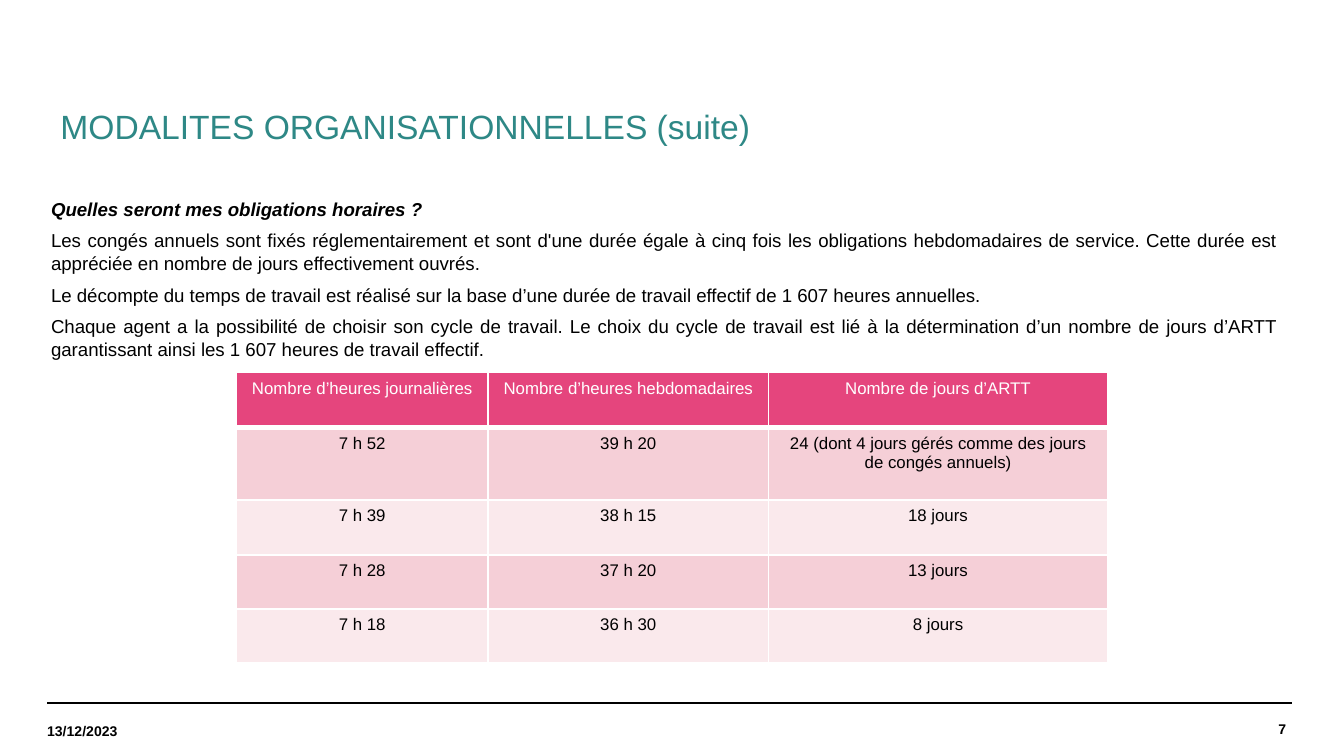
"""Build the slide on working hours and the matching days of leave."""
from lxml.etree import SubElement
from pptx import Presentation
from pptx.dml.color import RGBColor
from pptx.enum.shapes import MSO_CONNECTOR
from pptx.enum.text import MSO_ANCHOR, PP_ALIGN
from pptx.oxml.ns import qn
from pptx.util import Inches, Pt

TITLE = "MODALITES ORGANISATIONNELLES (suite)"
BODY = [
    "Quelles seront mes obligations horaires ?",
    "Les congés annuels sont fixés réglementairement et sont d'une durée égale à cinq fois les "
    "obligations hebdomadaires de service. Cette durée est appréciée en nombre de jours "
    "effectivement ouvrés.",
    "Le décompte du temps de travail est réalisé sur la base d’une durée de travail effectif "
    "de 1 607 heures annuelles.",
    "Chaque agent a la possibilité de choisir son cycle de travail. Le choix du cycle de travail "
    "est lié à la détermination d’un nombre de jours d’ARTT garantissant ainsi les 1 607 heures "
    "de travail effectif.",
]
CYCLES = [
    ("Nombre d’heures journalières", "Nombre d’heures hebdomadaires", "Nombre de jours d’ARTT"),
    ("7 h 52", "39 h 20", "24 (dont 4 jours gérés comme des jours de congés annuels)"),
    ("7 h 39", "38 h 15", "18 jours"),
    ("7 h 28", "37 h 20", "13 jours"),
    ("7 h 18", "36 h 30", "8 jours"),
]
WIDTHS = (1.87, 2.09, 2.52)
HEIGHTS = (0.41, 0.54, 0.41, 0.4, 0.4)
RULES = (0.35, 0.39)
FOOTER = [
    ("13/12/2023", (0.35, 5.25, 1.28, 0.38), PP_ALIGN.LEFT),
    ("7", (8.09, 5.23, 1.48, 0.39), PP_ALIGN.RIGHT),
]
THEME = {
    "font": "Arial", "title": 18, "body": 10, "cell": 9, "foot": 7.5,
    "teal": "2E8886", "ink": "000000", "white": "FFFFFF",
    "head": "E5457D", "bands": ("F5CFD7", "FAE9EC"),
}


def color(name):
    return RGBColor.from_string(THEME.get(name, name))


def style(para, size, ink="ink", bold=False, italic=False, align=PP_ALIGN.LEFT):
    para.alignment = align
    for run in para.runs:
        font = run.font
        font.name, font.size = THEME["font"], Pt(THEME[size])
        font.bold, font.italic = bold, italic
        font.color.rgb = color(ink)


def place(shape, box):
    shape.left, shape.top, shape.width, shape.height = map(Inches, box)


def clear(frame, anchor):
    frame.word_wrap = True
    frame.vertical_anchor = anchor
    frame.margin_left = frame.margin_right = frame.margin_top = frame.margin_bottom = 0


def add_title(slide):
    shape = slide.shapes.title
    place(shape, (0.35, 0.74, 9.29, 0.4))
    frame = shape.text_frame
    frame.text = TITLE
    frame.vertical_anchor = MSO_ANCHOR.TOP
    style(frame.paragraphs[0], "title", "teal")


def add_body(slide):
    shape = slide.placeholders[1]
    place(shape, (0.28, 1.24, 9.21, 3.7))
    frame = shape.text_frame
    clear(frame, MSO_ANCHOR.TOP)
    frame.margin_top = Inches(0.23)
    frame.text = "\n".join(BODY)
    for i, para in enumerate(frame.paragraphs):
        props = para._p.get_or_add_pPr()
        props.set("marL", str(Inches(0.1)))
        props.set("indent", "0")
        SubElement(props, qn("a:buNone"))
        para.space_before, para.space_after = Pt(0), Pt(5)
        style(para, "body", bold=i == 0, italic=i == 0, align=PP_ALIGN.JUSTIFY)


def add_edges(cell, bottom):
    props = cell._tc.get_or_add_tcPr()
    for side, width in (("L", 1), ("R", 1), ("T", 1), ("B", bottom)):
        edge = SubElement(props, qn(f"a:ln{side}"), w=str(Pt(width)))
        fill = SubElement(edge, qn("a:solidFill"))
        SubElement(fill, qn("a:srgbClr"), val=THEME["white"])


def add_cycles(slide):
    box = map(Inches, (1.76, 2.77, sum(WIDTHS), sum(HEIGHTS)))
    table = slide.shapes.add_table(len(CYCLES), len(WIDTHS), *box).table
    for col, width in zip(table.columns, WIDTHS):
        col.width = Inches(width)
    for r, (row, height) in enumerate(zip(CYCLES, HEIGHTS)):
        table.rows[r].height = Inches(height)
        back = THEME["bands"][(r - 1) % 2] if r else "head"
        for c, text in enumerate(row):
            cell = table.cell(r, c)
            cell.text = text
            add_edges(cell, 1 if r else 3)
            cell.fill.solid()
            cell.fill.fore_color.rgb = color(back)
            ink = "ink" if r else "white"
            style(cell.text_frame.paragraphs[0], "cell", ink, align=PP_ALIGN.CENTER)


def add_footer(slide):
    for left in RULES:
        ends = map(Inches, (left, 5.23, left + 9.22, 5.23))
        rule = slide.shapes.add_connector(MSO_CONNECTOR.STRAIGHT, *ends)
        rule.line.color.rgb = color("ink")
        rule.line.width = Pt(0.8)
        SubElement(rule._element.spPr, qn("a:effectLst"))
    for text, box, align in FOOTER:
        frame = slide.shapes.add_textbox(*map(Inches, box)).text_frame
        clear(frame, MSO_ANCHOR.MIDDLE)
        frame.text = text
        style(frame.paragraphs[0], "foot", bold=True, align=align)


def main():
    deck = Presentation()
    deck.slide_width = Inches(10)
    deck.slide_height = deck.slide_width * 9 // 16
    slide = deck.slides.add_slide(deck.slide_layouts[1])
    for add in (add_footer, add_body, add_title, add_cycles):
        add(slide)
    deck.save("out.pptx")


if __name__ == "__main__":
    main()
